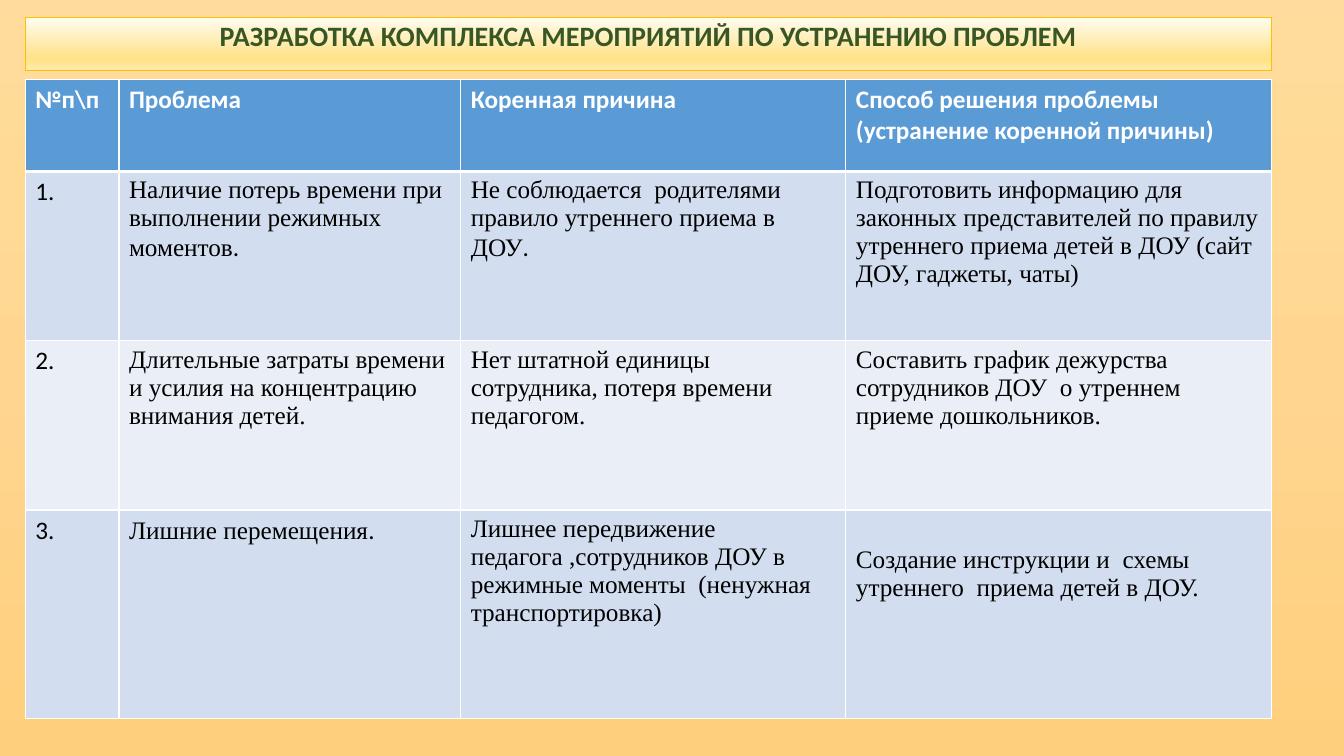
import dataclasses

import pptx
import pptx.dml.color
import pptx.dml.fill
import pptx.enum.shapes
import pptx.enum.text
import pptx.oxml
import pptx.oxml.ns
import pptx.slide
import pptx.table
import pptx.text.text
import pptx.util
from pptx.util import Inches

RGB = pptx.dml.color.RGBColor
WHITE = RGB(0xFF, 0xFF, 0xFF)
BLACK = RGB(0x00, 0x00, 0x00)
DARK_GREEN = RGB(0x38, 0x57, 0x23)
GOLD = RGB(0xFF, 0xC0, 0x00)
HEADER_BLUE = RGB(0x5B, 0x9B, 0xD5)
BAND_DARK = RGB(0xD2, 0xDE, 0xEF)
BAND_LIGHT = RGB(0xEA, 0xEF, 0xF7)

BACKDROP_STOPS = {
    0: RGB(0xFF, 0xDB, 0x9E),
    4: RGB(0xFF, 0xDC, 0x9B),
    25: RGB(0xFF, 0xDA, 0x95),
    50: RGB(0xFF, 0xD5, 0x90),
    100: RGB(0xFF, 0xD0, 0x7C),
}
BANNER_STOPS = {
    0: RGB(0xFF, 0xFC, 0xF2),
    74: RGB(0xFF, 0xE3, 0x8C),
    83: RGB(0xFF, 0xE3, 0x8C),
    100: RGB(0xFF, 0xEC, 0xB2),
}

SANS = "Calibri"
SERIF = "Times New Roman"
LEFT, WIDTH = Inches(0.25), Inches(12.36)
COLUMN_WIDTHS = (0.93, 3.39, 3.82, 4.22)
ROW_HEIGHTS = (0.91, 1.68, 1.68, 2.07)


@dataclasses.dataclass(frozen=True)
class Entry:
    """Cell text; sans_stop sets the closing full stop in the sans font."""

    paragraphs: tuple[str, ...]
    font: str = SERIF
    sans_stop: bool = False
    top_margin: float = 0.05


HEADINGS = (
    "№п\\п",
    "Проблема",
    "Коренная причина",
    "Способ решения проблемы (устранение коренной причины)",
)
PROBLEMS = (
    (
        Entry(
            ("Наличие потерь времени при", "выполнении режимных моментов."),
            sans_stop=True,
        ),
        Entry(
            ("Не соблюдается  родителями правило утреннего приема в ДОУ.",),
            sans_stop=True,
        ),
        Entry((
            "Подготовить информацию для законных представителей по правилу "
            "утреннего приема детей в ДОУ (сайт ДОУ, гаджеты, чаты)",
        )),
    ),
    (
        Entry((
            "Длительные затраты времени и усилия на концентрацию  внимания детей.",
        )),
        Entry(("Нет штатной единицы сотрудника, потеря времени педагогом.",)),
        Entry((
            "Составить график дежурства сотрудников ДОУ  о утреннем приеме "
            "дошкольников.",
        )),
    ),
    (
        Entry(("Лишние перемещения.",), sans_stop=True),
        Entry((
            "Лишнее передвижение педагога ,сотрудников ДОУ в режимные моменты  "
            "(ненужная транспортировка)",
        )),
        Entry(
            ("Создание инструкции и  схемы утреннего  приема детей в ДОУ.",),
            top_margin=0.36,
        ),
    ),
)


def set_downward_gradient(
    fill: pptx.dml.fill.FillFormat, owner, stops: dict[int, RGB]
) -> None:
    fill.gradient()
    fill.gradient_angle = 270
    stop_list = next(owner.iter(pptx.oxml.ns.qn("a:gsLst")))
    for old_stop in list(stop_list):
        stop_list.remove(old_stop)
    for percent, color in stops.items():
        stop_list.append(pptx.oxml.parse_xml(
            f'<a:gs {pptx.oxml.ns.nsdecls("a")} pos="{percent * 1000}">'
            f'<a:srgbClr val="{color}"/></a:gs>'
        ))


def add_run(
    paragraph: pptx.text.text._Paragraph,
    text: str,
    font: str,
    color: RGB,
    size: int = 18,
    bold: bool = False,
) -> None:
    run = paragraph.add_run()
    run.text = text
    run.font.color.rgb = color
    font_format = {"name": font, "size": pptx.util.Pt(size), "bold": bold}
    for attribute, value in font_format.items():
        setattr(run.font, attribute, value)


def set_borders(cell: pptx.table._Cell, is_header: bool, below_header: bool) -> None:
    widths = {
        "lnL": 1,
        "lnR": 1,
        "lnT": 3 if below_header else 1,
        "lnB": 3 if is_header else 1,
    }
    properties = cell._tc.get_or_add_tcPr()
    for side, points in widths.items():
        properties.append(pptx.oxml.parse_xml(
            f'<a:{side} {pptx.oxml.ns.nsdecls("a")} w="{pptx.util.Pt(points)}">'
            f'<a:solidFill><a:srgbClr val="{WHITE}"/></a:solidFill></a:{side}>'
        ))


def fill_cell(cell: pptx.table._Cell, entry: Entry, row: int) -> None:
    is_header = row == 0
    set_borders(cell, is_header, below_header=row == 1)
    cell.fill.solid()
    band = BAND_DARK if row % 2 else BAND_LIGHT
    cell.fill.fore_color.rgb = HEADER_BLUE if is_header else band
    cell.margin_top = Inches(entry.top_margin)
    color = WHITE if is_header else BLACK
    last = len(entry.paragraphs) - 1
    for index, text in enumerate(entry.paragraphs):
        frame = cell.text_frame
        paragraph = frame.add_paragraph() if index else frame.paragraphs[0]
        if entry.sans_stop and index == last:
            add_run(paragraph, text[:-1], entry.font, color)
            add_run(paragraph, text[-1], SANS, color)
        else:
            add_run(paragraph, text, entry.font, color, bold=is_header)


def add_banner(slide: pptx.slide.Slide) -> None:
    banner = slide.shapes.add_shape(
        pptx.enum.shapes.MSO_SHAPE.RECTANGLE, LEFT, Inches(0.17), WIDTH, Inches(0.53)
    )
    banner.shadow.inherit = False
    set_downward_gradient(banner.fill, banner.element, BANNER_STOPS)
    banner.line.color.rgb = GOLD
    banner.line.width = pptx.util.Pt(0.5)
    banner.text_frame.word_wrap = True
    banner.text_frame.vertical_anchor = pptx.enum.text.MSO_ANCHOR.TOP
    title = banner.text_frame.paragraphs[0]
    title_format = {
        "alignment": pptx.enum.text.PP_ALIGN.CENTER,
        "line_spacing": 0.9,
        "space_before": pptx.util.Pt(10),
    }
    for attribute, value in title_format.items():
        setattr(title, attribute, value)
    add_run(
        title,
        "РАЗРАБОТКА КОМПЛЕКСА МЕРОПРИЯТИЙ ПО УСТРАНЕНИЮ ПРОБЛЕМ",
        SANS, DARK_GREEN, size=20, bold=True,
    )


def add_problem_table(slide: pptx.slide.Slide) -> None:
    table = slide.shapes.add_table(
        len(ROW_HEIGHTS), len(COLUMN_WIDTHS),
        LEFT, Inches(0.79), WIDTH, Inches(sum(ROW_HEIGHTS)),
    ).table
    for column, width in zip(table.columns, COLUMN_WIDTHS):
        column.width = Inches(width)
    for table_row, height in zip(table.rows, ROW_HEIGHTS):
        table_row.height = Inches(height)
    rows = [tuple(Entry((heading,), SANS) for heading in HEADINGS)]
    for number, problem in enumerate(PROBLEMS, start=1):
        rows.append((Entry((f"{number}.",), SANS), *problem))
    for row, entries in enumerate(rows):
        for column, entry in enumerate(entries):
            fill_cell(table.cell(row, column), entry, row)


def main() -> None:
    deck = pptx.Presentation()
    deck.slide_width, deck.slide_height = Inches(13.33), Inches(7.5)
    slide = deck.slides.add_slide(deck.slide_layouts[6])
    set_downward_gradient(slide.background.fill, slide.element, BACKDROP_STOPS)
    add_banner(slide)
    add_problem_table(slide)
    deck.save("out.pptx")


if __name__ == "__main__":
    main()
